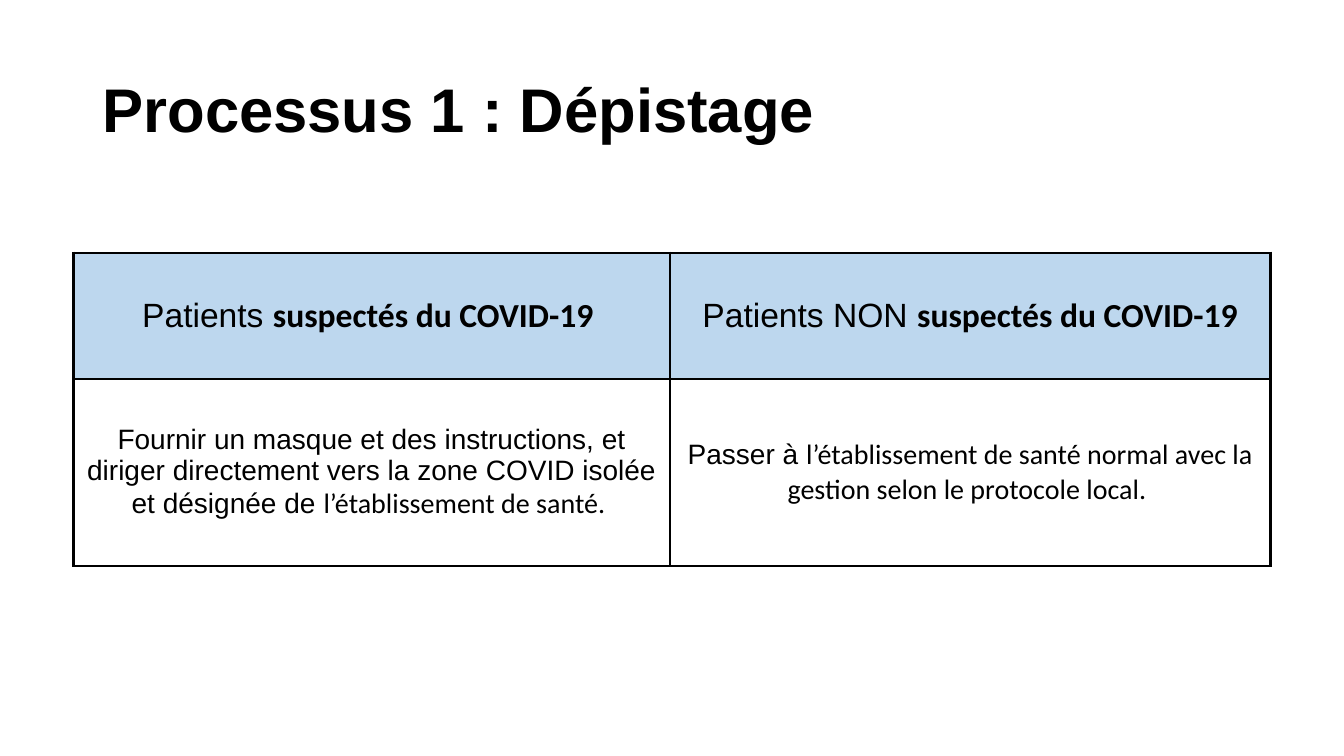
from lxml.etree import SubElement
from pptx import Presentation
from pptx.dml.color import RGBColor
from pptx.enum.text import MSO_ANCHOR as Anchor, MSO_AUTO_SIZE as AutoSize, PP_ALIGN as Align
from pptx.oxml.ns import qn
from pptx.util import Pt

PX = 9525
BLACK = RGBColor(0x00, 0x00, 0x00)
HEADER_BLUE = RGBColor(0xBD, 0xD7, 0xEE)
THIN, THICK = 1.5, 2.25

COLUMN_WIDTHS = [568, 572]
ROW_HEIGHTS = [120, 178]
HEADINGS = [
    [("Patients ", "Arial", False), ("suspectés du COVID-19 ", "Calibri", True)],
    [("Patients NON ", "Arial", False), ("suspectés du COVID-19", "Calibri", True)],
]
ACTIONS = [
    [("Fournir un masque et des instructions, et diriger directement vers la zone "
      "COVID isolée et désignée de ", "Arial", False),
     ("l’établissement de santé. ", "Calibri", False)],
    [("Passer à ", "Arial", False),
     ("l’établissement de santé normal avec la gestion selon le protocole local. ",
      "Calibri", False)],
]


def write(frame, pieces, size, align=Align.LEFT, spacing=1.0, color=BLACK):
    paragraph = frame.paragraphs[0]
    paragraph.alignment = align
    paragraph.line_spacing = spacing
    for words, font, bold in pieces:
        run = paragraph.add_run()
        run.text = words
        run.font.name = font
        run.font.size = Pt(size)
        run.font.bold = bold
        run.font.color.rgb = color


def draw_borders(cell, left, right):
    properties = cell._tc.get_or_add_tcPr()
    sides = [("a:lnL", left), ("a:lnR", right), ("a:lnT", THICK), ("a:lnB", THICK)]
    for tag, width in sides:
        line = SubElement(properties, qn(tag), w=str(Pt(width)))
        fill = SubElement(line, qn("a:solidFill"))
        SubElement(fill, qn("a:srgbClr"), val=str(BLACK))


def add_heading(slide, left, top, width, height):
    heading = slide.shapes.title
    heading.left, heading.top = left * PX, top * PX
    heading.width, heading.height = width * PX, height * PX
    frame = heading.text_frame
    frame.auto_size = AutoSize.NONE
    frame.word_wrap = True
    frame.vertical_anchor = Anchor.MIDDLE
    write(frame, [("Processus 1 : Dépistage", "Arial", True)], size=44, spacing=0.9)


def add_triage(slide, left, top):
    triage = slide.shapes.add_table(
        len(ROW_HEIGHTS), len(COLUMN_WIDTHS), left * PX, top * PX,
        sum(COLUMN_WIDTHS) * PX, sum(ROW_HEIGHTS) * PX).table
    triage.first_row = triage.horz_banding = False
    for column, width in zip(triage.columns, COLUMN_WIDTHS):
        column.width = width * PX
    for row, height in zip(triage.rows, ROW_HEIGHTS):
        row.height = height * PX
    for r, (contents, size) in enumerate([(HEADINGS, 24), (ACTIONS, 20)]):
        for c, pieces in enumerate(contents):
            cell = triage.cell(r, c)
            cell.margin_left = cell.margin_right = 10 * PX
            cell.margin_top = cell.margin_bottom = 10 * PX
            cell.vertical_anchor = Anchor.MIDDLE
            write(cell.text_frame, pieces, size=size, align=Align.CENTER)
            draw_borders(cell, *((THICK, THIN) if c == 0 else (THIN, THICK)))
            if r == 0:
                cell.fill.solid()
                cell.fill.fore_color.rgb = HEADER_BLUE
            else:
                cell.fill.background()


def main():
    deck = Presentation()
    deck.slide_width, deck.slide_height = 1280 * PX, 720 * PX
    slide = deck.slides.add_slide(deck.slide_layouts[5])
    add_heading(slide, 88, 38, 1104, 139)
    add_triage(slide, 70, 241)
    deck.save("out.pptx")


if __name__ == "__main__":
    main()
